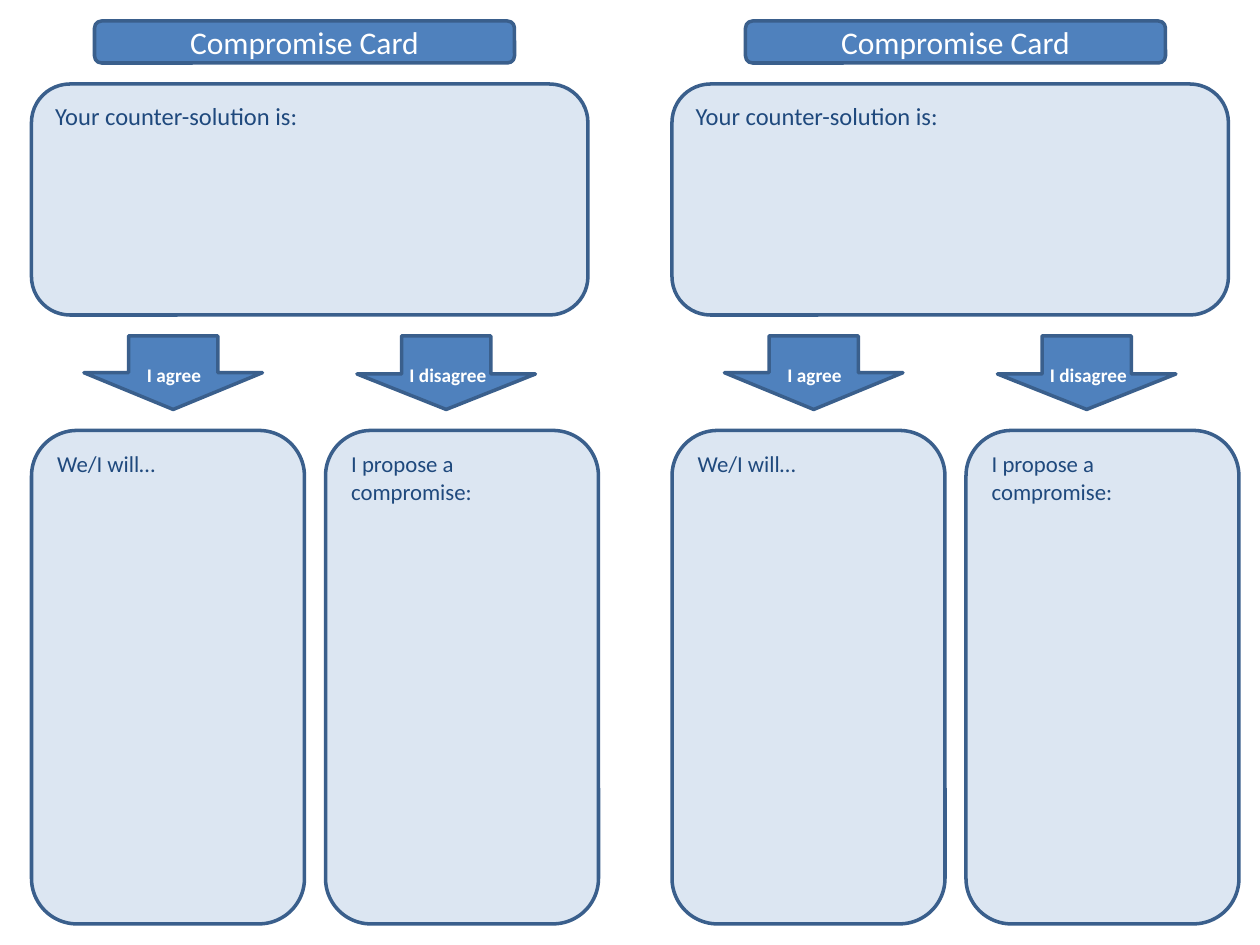
from dataclasses import dataclass

from pptx import Presentation
from pptx.dml.color import RGBColor
from pptx.enum import shapes, text
from pptx.util import Pt

FONT = "Calibri"
BLUE, PALE, EDGE, NAVY, WHITE = "4F81BD", "DCE6F2", "3A5F8C", "1F497D", "FFFFFF"


# Lengths in points; left is measured from the left edge of a card
@dataclass(frozen=True)
class Panel:
    label: str
    left: float
    top: float
    width: float
    height: float
    size: float


@dataclass(frozen=True)
class Choice:
    label: str
    left: float
    label_left: float
    head: float


@dataclass(frozen=True)
class Card:
    left: float
    title_left: float


CARDS = [Card(18, 54), Card(384, 426)]
PANELS = [
    Panel("Your counter-solution is:", 0, 48, 318, 132, 14),
    Panel("We/I will…", 0, 246, 156, 282, 13),
    Panel("I propose a compromise:", 168, 246, 156, 282, 13),
]
CHOICES = [
    Choice("I agree", 30, 54, 0.5),
    Choice("I disagree", 186, 204, 0.482),
]


def color(value: str) -> RGBColor:
    return RGBColor.from_string(value)


def add_box(parent, kind, left: float, top: float, width: float, height: float, fill: str):
    box = parent.add_shape(kind, Pt(left), Pt(top), Pt(width), Pt(height))
    box.shadow.inherit = False
    box.fill.solid()
    box.fill.fore_color.rgb = color(fill)
    box.line.color.rgb = color(EDGE)
    box.line.width = Pt(2)
    return box


def write(box, label: str, size: float, ink: str, align, anchor, bold: bool = False) -> None:
    frame = box.text_frame
    frame.word_wrap = True
    frame.vertical_anchor = anchor
    para = frame.paragraphs[0]
    para.text = label
    para.alignment = align
    para.font.name = FONT
    para.font.size = Pt(size)
    para.font.bold = bold
    para.font.color.rgb = color(ink)


def add_title(page, left: float) -> None:
    box = add_box(page.shapes, shapes.MSO_SHAPE.ROUNDED_RECTANGLE, left, 12, 240, 24, BLUE)
    write(box, "Compromise Card", 18, WHITE, text.PP_ALIGN.CENTER, text.MSO_ANCHOR.MIDDLE)


def add_panel(page, panel: Panel, card_left: float) -> None:
    box = add_box(page.shapes, shapes.MSO_SHAPE.ROUNDED_RECTANGLE, card_left + panel.left,
                  panel.top, panel.width, panel.height, PALE)
    write(box, panel.label, panel.size, NAVY, text.PP_ALIGN.LEFT, text.MSO_ANCHOR.TOP)


def add_choice(page, choice: Choice, card_left: float) -> None:
    group = page.shapes.add_group_shape()
    arrow = add_box(group.shapes, shapes.MSO_SHAPE.DOWN_ARROW,
                    card_left + choice.left, 192, 102, 42, BLUE)
    arrow.adjustments[1] = choice.head
    box = group.shapes.add_textbox(Pt(card_left + choice.label_left), Pt(204), Pt(66), Pt(21))
    write(box, choice.label, 11, WHITE, text.PP_ALIGN.LEFT, text.MSO_ANCHOR.TOP, bold=True)
    box.text_frame.margin_left = Pt(12)
    box.text_frame.margin_right = 0
    box.text_frame.auto_size = text.MSO_AUTO_SIZE.SHAPE_TO_FIT_TEXT


def main() -> None:
    deck = Presentation()
    deck.slide_width, deck.slide_height = Pt(720), Pt(540)
    page = deck.slides.add_slide(deck.slide_layouts[6])  # blank layout

    # Two matching cards side by side
    for card in CARDS:
        add_title(page, card.title_left)
        for panel in PANELS:
            add_panel(page, panel, card.left)
        for choice in CHOICES:
            add_choice(page, choice, card.left)

    deck.save("out.pptx")


if __name__ == "__main__":
    main()
